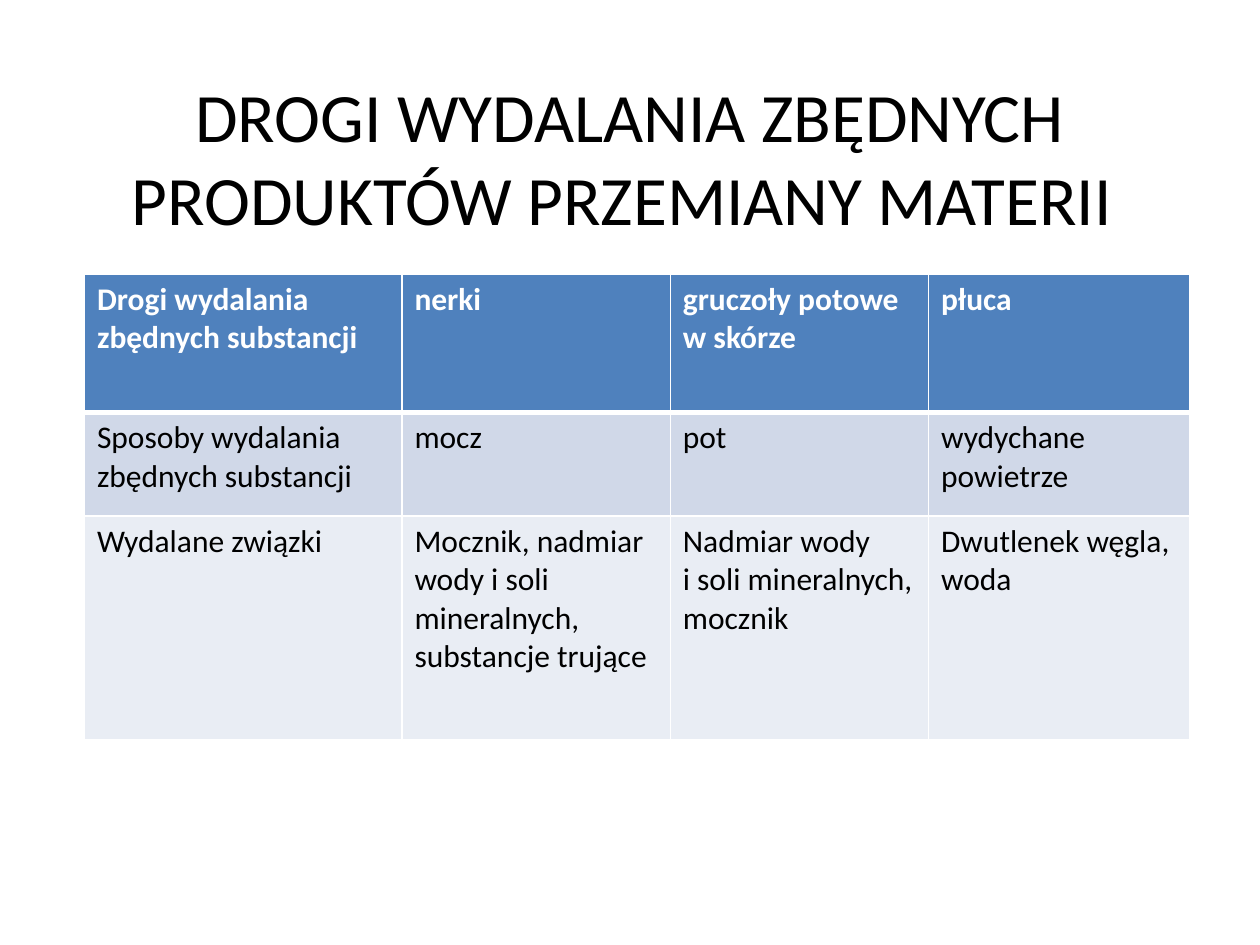
from lxml.etree import SubElement
from pptx import Presentation
from pptx.dml.color import RGBColor
from pptx.enum.text import MSO_ANCHOR as Anchor, MSO_AUTO_SIZE as AutoSize, PP_ALIGN as Align
from pptx.oxml.ns import qn
from pptx.util import Inches, Pt

COLORS = {
    "text": "000000",
    "white": "FFFFFF",
    "header": "4F81BD",
    "band_dark": "D0D8E8",
    "band_light": "E9EDF4",
}
WIDTH, HEIGHT = 10, 7.5
TITLE = "DROGI WYDALANIA ZBĘDNYCH\vPRODUKTÓW PRZEMIANY MATERII "
ROUTES = [
    ["Drogi wydalania zbędnych substancji", "nerki", "gruczoły potowe w skórze", "płuca"],
    ["Sposoby wydalania zbędnych substancji", "mocz", "pot", "wydychane powietrze"],
    [
        "Wydalane związki",
        "Mocznik, nadmiar wody i soli mineralnych, substancje trujące",
        "Nadmiar wody\ni soli mineralnych, mocznik",
        "Dwutlenek węgla, woda",
    ],
]
ROW_FILLS = ["header", "band_dark", "band_light"]


class SlideBuilder:
    font_name = "Calibri"

    def __init__(self, deck):
        self.page = deck.slides.add_slide(deck.slide_layouts[5])
        self.width, self.height = deck.slide_width, deck.slide_height

    def area(self, left, top, width, height):
        return (
            int(left * self.width),
            int(top * self.height),
            int(width * self.width),
            int(height * self.height),
        )

    def format_text(self, frame, size, color, bold=False, align=Align.LEFT):
        for para in frame.paragraphs:
            para.alignment = align
            para.font.name = self.font_name
            para.font.size = Pt(size)
            para.font.bold = bold
            para.font.color.rgb = RGBColor.from_string(COLORS[color])

    def title(self, text, *shares):
        box = self.page.shapes.title
        box.left, box.top, box.width, box.height = self.area(*shares)
        frame = box.text_frame
        frame.text = text
        frame.word_wrap = True
        frame.auto_size = AutoSize.NONE
        frame.vertical_anchor = Anchor.MIDDLE
        self.format_text(frame, 39.6, "text", align=Align.CENTER)

    def borders(self, cell, **widths):
        properties = cell._tc.get_or_add_tcPr()
        for position, side in enumerate(("L", "R", "T", "B")):
            line = SubElement(properties, qn(f"a:ln{side}"), w=str(Pt(widths.get(side, 1))))
            fill = SubElement(line, qn("a:solidFill"))
            SubElement(fill, qn("a:srgbClr"), val=COLORS["white"])
            properties.remove(line)
            properties.insert(position, line)

    def table(self, rows, fills, column_widths, row_heights, left, top):
        shares = left, top, sum(column_widths) / WIDTH, sum(row_heights) / HEIGHT
        grid = self.page.shapes.add_table(len(rows), len(rows[0]), *self.area(*shares)).table
        for column, width in zip(grid.columns, column_widths):
            column.width = Inches(width)
        for index, (row, height) in enumerate(zip(grid.rows, row_heights)):
            row.height = Inches(height)
            header = index == 0
            edges = {"B": 3} if header else {"T": 3} if index == 1 else {}
            for cell, text in zip(row.cells, rows[index]):
                cell.text = text
                cell.fill.solid()
                cell.fill.fore_color.rgb = RGBColor.from_string(COLORS[fills[index]])
                self.format_text(cell.text_frame, 18, "white" if header else "text", header)
                self.borders(cell, **edges)


def main():
    deck = Presentation()
    deck.slide_width, deck.slide_height = Inches(WIDTH), Inches(HEIGHT)
    builder = SlideBuilder(deck)
    builder.table(ROUTES, ROW_FILLS, [2.52, 2.13, 2.05, 2.07], [1.1, 0.82, 1.78], 0.067, 0.29)
    builder.title(TITLE, 0.05, 0.08, 0.9, 0.17)
    deck.save("out.pptx")


if __name__ == "__main__":
    main()
